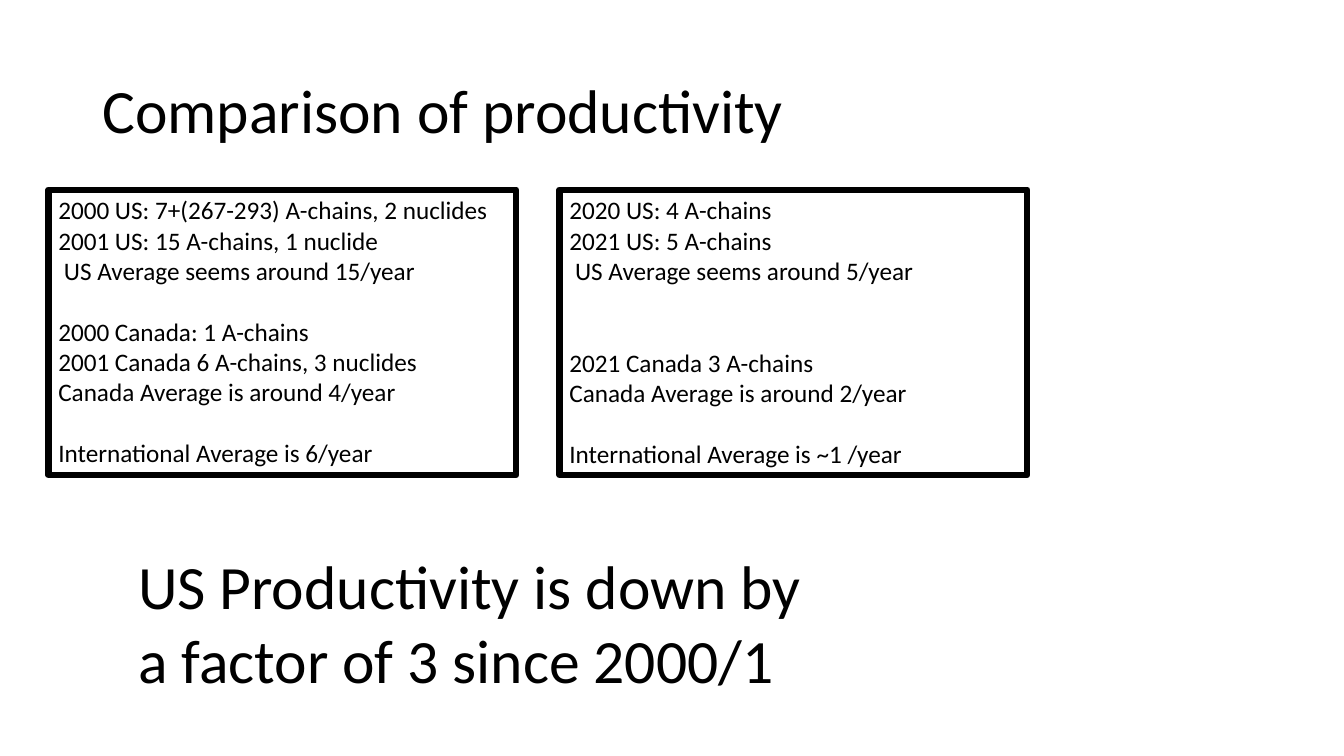
"""Build a slide comparing evaluation productivity in 2000/1 and 2020/1."""
from pptx import Presentation
from pptx.dml.color import RGBColor
from pptx.enum.shapes import MSO_SHAPE
from pptx.enum.text import MSO_ANCHOR, MSO_AUTO_SIZE, PP_ALIGN
from pptx.util import Cm, Pt

COLORS = {"ink": "000000", "page": "FFFFFF"}
FONT = "Calibri"
BODY_LINE = 22
PERIODS = [
    [
        (0, "2000 US: 7+(267-293) A-chains, 2 nuclides"),
        (0, "2001 US: 15 A-chains, 1 nuclide"),
        (0, " US Average seems around 15/year"),
        (1, "2000 Canada: 1 A-chains"),
        (0, "2001 Canada 6 A-chains, 3 nuclides"),
        (0, "Canada Average is around 4/year"),
        (1, "International Average is 6/year"),
    ],
    [
        (0, "2020 US: 4 A-chains"),
        (0, "2021 US: 5 A-chains"),
        (0, " US Average seems around 5/year"),
        (2, "2021 Canada 3 A-chains"),
        (0, "Canada Average is around 2/year"),
        (1, "International Average is ~1 /year"),
    ],
]


def format_text(frame, size, anchor):
    """Apply the shared font, alignment and wrapping to a text frame."""
    frame.word_wrap = True
    frame.vertical_anchor = anchor
    for para in frame.paragraphs:
        para.alignment = PP_ALIGN.LEFT
        for span in para.runs:
            span.font.name = FONT
            span.font.size = Pt(size)
            span.font.color.rgb = RGBColor.from_string(COLORS["ink"])


deck = Presentation()
deck.slide_width, deck.slide_height = Cm(33.87), Cm(19.05)
page = deck.slides.add_slide(deck.slide_layouts[5])
page.background.fill.solid()
page.background.fill.fore_color.rgb = RGBColor.from_string(COLORS["page"])

title = page.shapes.title
title.left, title.top, title.width, title.height = Cm(2.33), Cm(1.01), Cm(29.21), Cm(3.68)
title.text_frame.text = "Comparison of productivity"
title.text_frame.paragraphs[0].line_spacing = 0.9
format_text(title.text_frame, 44, MSO_ANCHOR.MIDDLE)

for column, lines in enumerate(PERIODS):
    box = page.shapes.add_shape(
        MSO_SHAPE.RECTANGLE, Cm(1.22 + 12.88 * column), Cm(4.78), Cm(11.79), Cm(7.19)
    )
    box.shadow.inherit = False
    box.fill.background()
    box.line.color.rgb = RGBColor.from_string(COLORS["ink"])
    box.line.width = Pt(4.5)
    box.text_frame.text = "\n".join(text for _, text in lines)
    for para, (gap, _) in zip(box.text_frame.paragraphs, lines):
        para.space_before = Pt(gap * BODY_LINE)
    format_text(box.text_frame, 18, MSO_ANCHOR.TOP)
    box.text_frame.auto_size = MSO_AUTO_SIZE.SHAPE_TO_FIT_TEXT

conclusion = page.shapes.add_textbox(Cm(3.23), Cm(13.69), Cm(18.26), Cm(4.01))
conclusion.text_frame.text = "US Productivity is down by a factor of 3 since 2000/1"
format_text(conclusion.text_frame, 44, MSO_ANCHOR.TOP)
conclusion.text_frame.auto_size = MSO_AUTO_SIZE.SHAPE_TO_FIT_TEXT

deck.save("out.pptx")
